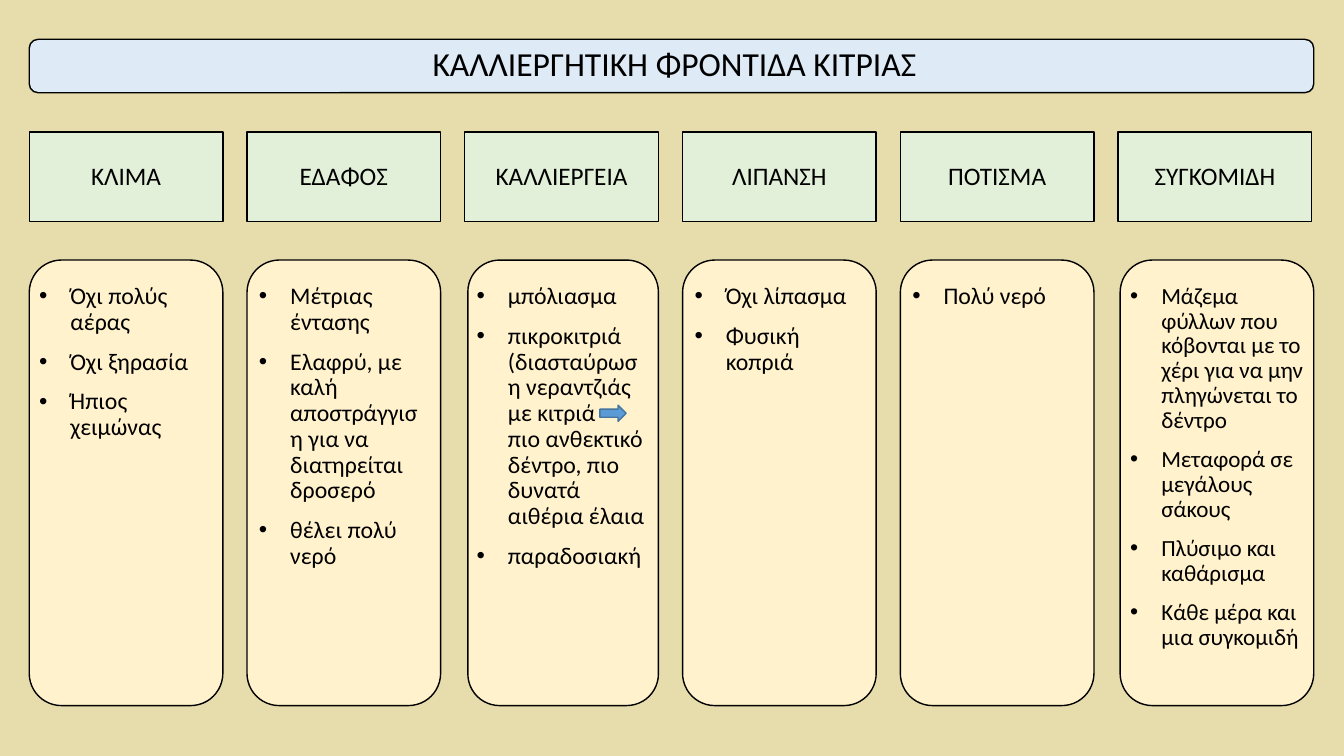
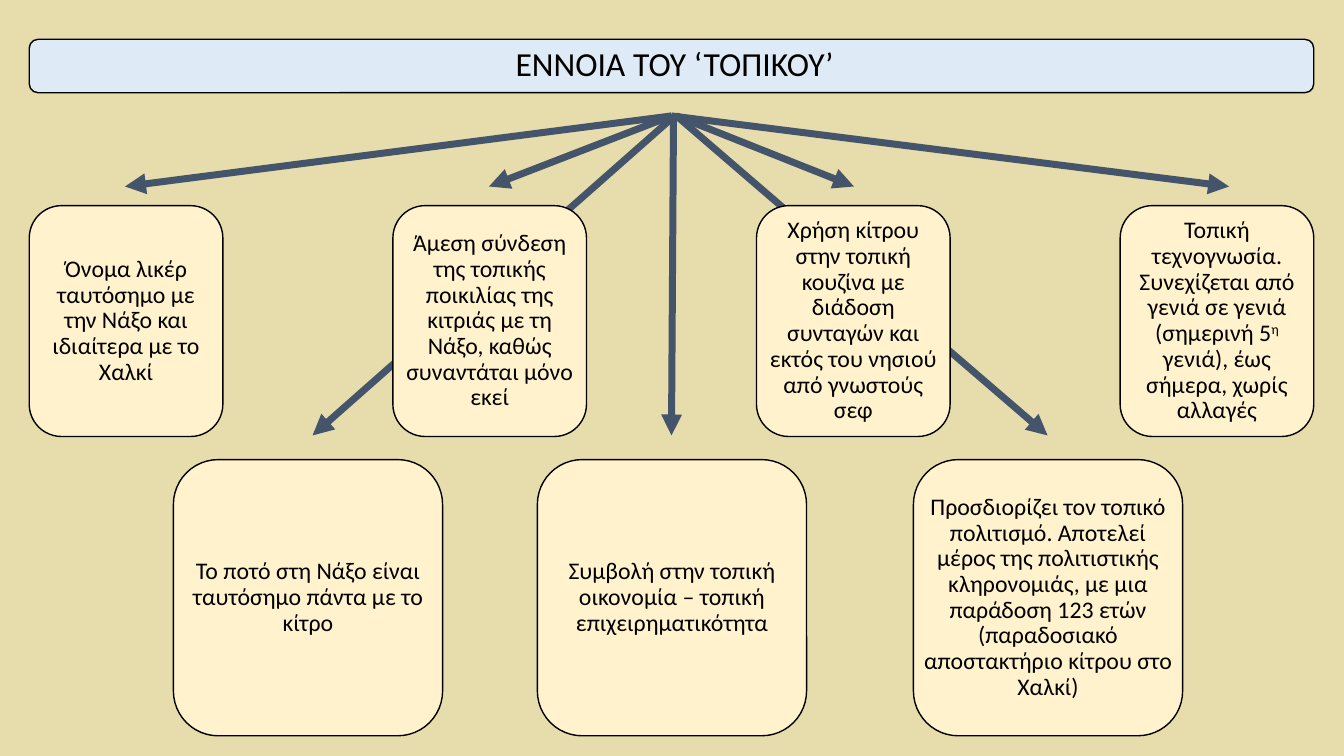
from lxml.etree import SubElement
from pptx import Presentation
from pptx.dml.color import RGBColor
from pptx.enum.shapes import MSO_CONNECTOR as CONN, MSO_SHAPE as SHAPE
from pptx.enum.text import MSO_ANCHOR as ANCHOR, PP_ALIGN as ALIGN
from pptx.oxml.ns import qn
from pptx.util import Inches, Pt

FONT = "Calibri"
SAND, BLUE, GREEN, CREAM = "E6DCAC", "DEEBF7", "E2F0D9", "FFF2CC"
INK, SLATE, ARROW, ARROW_EDGE = "000000", "44546A", "5B9BD5", "43739E"
WIDTH, HEIGHT = 13.33, 7.5
MARGIN, CARD_W = 0.29, 1.92
BANNER = (MARGIN, 0.39, 12.74, 0.53)
COL_PITCH = 2.16
HEAD_TOP, HEAD_H = 1.31, 0.89
CARD_TOP, CARD_H = 2.58, 4.42
LIST_TOP, LIST_H = 2.77, 3.97
UPPER_TOP, UPPER_H, UPPER_TIP = 2.04, 2.29, 1.85
UPPER_PITCH = (BANNER[2] - CARD_W) / 3
LOWER_TOP, LOWER_W, LOWER_H, LOWER_TIP = 4.56, 2.67, 2.74, 4.32
FAN_TOP = 1.15

HEADINGS = ["ΚΛΙΜΑ", "ΕΔΑΦΟΣ", "ΚΑΛΛΙΕΡΓΕΙΑ", "ΛΙΠΑΝΣΗ", "ΠΟΤΙΣΜΑ", "ΣΥΓΚΟΜΙΔΗ"]
# Each card: shift and trim of the card, shift and width of its list, size, items
CARDS = [
    (0, 0, 0, 1.92, 17, ["Όχι πολύς αέρας", "Όχι ξηρασία", "Ήπιος χειμώνας"]),
    (0, 0, 0.02, 1.88, 17, [
        "Μέτριας έντασης",
        "Ελαφρύ, με καλή αποστράγγιση για να διατηρείται δροσερό",
        "θέλει πολύ νερό"]),
    (0.03, 0.03, 0.02, 1.88, 17, [
        "μπόλιασμα",
        "πικροκιτριά (διασταύρωση νεραντζιάς με κιτριά\v"
        "πιο ανθεκτικό δέντρο, πιο δυνατά αιθέρια έλαια",
        "παραδοσιακή"]),
    (0, 0, 0.02, 1.92, 17, ["Όχι λίπασμα", "Φυσική κοπριά"]),
    (0, 0, 0.02, 1.88, 17, ["Πολύ νερό"]),
    (0.02, 0, 0.02, 1.92, 16.5, [
        "Μάζεμα φύλλων που κόβονται με το χέρι για να μην πληγώνεται το δέντρο",
        "Μεταφορά σε μεγάλους σάκους",
        "Πλύσιμο και καθάρισμα",
        "Κάθε μέρα και μια συγκομιδή"]),
]
UPPER = [
    (6.66, 1.24, ["Όνομα λικέρ ταυτόσημο με την Νάξο και ιδιαίτερα με το Χαλκί"]),
    (6.66, 4.85, ["Άμεση σύνδεση της τοπικής ποικιλίας της κιτριάς με τη Νάξο, "
                  "καθώς συναντάται μόνο εκεί"]),
    (6.71, 8.47, ["Χρήση κίτρου στην τοπική κουζίνα με διάδοση συνταγών και "
                  "εκτός του νησιού από γνωστούς σεφ"]),
    (6.66, 12.19, ["Τοπική τεχνογνωσία. Συνεχίζεται από γενιά σε γενιά (σημερινή 5",
                   "η", " γενιά), έως σήμερα, χωρίς αλλαγές"]),
]
LOWER = [
    (1.72, 6.69, 3.1, "Το ποτό στη Νάξο είναι ταυτόσημο πάντα με το κίτρο"),
    (5.33, 6.68, 6.66, "Συμβολή στην τοπική οικονομία – τοπική επιχειρηματικότητα"),
    (9.06, 6.71, 10.39, "Προσδιορίζει τον τοπικό πολιτισμό. Αποτελεί μέρος της "
                        "πολιτιστικής κληρονομιάς, με μια παράδοση 123 ετών "
                        "(παραδοσιακό αποστακτήριο κίτρου στο Χαλκί)"),
]


def rgb(value):
    """Turn a hex string into a colour."""
    return RGBColor.from_string(value)


def add_box(s, kind, at, fill, line=INK):
    """Draw a filled, outlined preset shape without a shadow."""
    sp = s.shapes.add_shape(kind, *map(Inches, at))
    sp.shadow.inherit = False
    sp.fill.solid()
    sp.fill.fore_color.rgb = rgb(fill)
    sp.line.color.rgb = rgb(line)
    sp.line.width = Pt(1)
    return sp


def style(p, size, align):
    """Give a paragraph and its runs the shared look."""
    p.alignment = align
    p.line_spacing = 0.9
    for r in p.runs:
        r.font.name = FONT
        r.font.size = Pt(size)
        r.font.color.rgb = rgb(INK)


def label(sp, parts, size):
    """Centre text in a shape, raising every second part."""
    tf = sp.text_frame
    tf.word_wrap = True
    tf.vertical_anchor = ANCHOR.MIDDLE
    p = tf.paragraphs[0]
    for i, part in enumerate(parts):
        r = p.add_run()
        r.text = part
        if i % 2:
            r.font._element.set("baseline", "30000")
    style(p, size, ALIGN.CENTER)


def bullet(p):
    """Add a hanging round bullet to a paragraph."""
    pPr = p._p.get_or_add_pPr()
    pPr.set("marL", str(Inches(0.31)))
    pPr.set("indent", str(-Inches(0.31)))
    SubElement(pPr, qn("a:buFont")).set("typeface", "Arial")
    SubElement(pPr, qn("a:buChar")).set("char", "•")


def add_list(s, at, items, size):
    """Write a bulleted list."""
    tf = s.shapes.add_textbox(*map(Inches, at)).text_frame
    tf.word_wrap = True
    for i, item in enumerate(items):
        p = tf.add_paragraph() if i else tf.paragraphs[0]
        p.text = item
        bullet(p)
        p.space_before = Pt(10 if i else 0)
        style(p, size, ALIGN.LEFT)


def add_card(s, at, parts):
    """Draw a cream card with centred text over its full width."""
    add_box(s, SHAPE.ROUNDED_RECTANGLE, at, CREAM)
    label(s.shapes.add_textbox(*map(Inches, at)), parts, 17)


def add_arrow(s, start, tip, bottom):
    """Draw a thick arrow from below the banner down to a card."""
    cn = s.shapes.add_connector(
        CONN.STRAIGHT, *map(Inches, (start, FAN_TOP, tip, bottom)))
    cn.line.color.rgb = rgb(SLATE)
    cn.line.width = Pt(5)
    SubElement(cn.line._get_or_add_ln(), qn("a:tailEnd")).set("type", "triangle")
    SubElement(cn._element.spPr, qn("a:effectLst"))


def new_slide(prs, title):
    """Add a sand-coloured slide with a title banner."""
    s = prs.slides.add_slide(prs.slide_layouts[6])
    s.background.fill.solid()
    s.background.fill.fore_color.rgb = rgb(SAND)
    sp = add_box(s, SHAPE.ROUNDED_RECTANGLE, BANNER, BLUE)
    sp.text_frame.margin_left = Inches(0.16)
    label(sp, [title], 24)
    return s


def care_slide(prs):
    """Build the six columns of cultivation care."""
    s = new_slide(prs, "ΚΑΛΛΙΕΡΓΗΤΙΚΗ ΦΡΟΝΤΙΔΑ ΚΙΤΡΙΑΣ")
    for i, (heading, card) in enumerate(zip(HEADINGS, CARDS)):
        shift, trim, list_shift, list_w, size, items = card
        left = MARGIN + i * COL_PITCH
        head = add_box(s, SHAPE.RECTANGLE, (left, HEAD_TOP, CARD_W, HEAD_H), GREEN)
        label(head, [heading], 18)
        add_box(s, SHAPE.ROUNDED_RECTANGLE,
                (left + shift, CARD_TOP, CARD_W - trim, CARD_H), CREAM)
        add_list(s, (left + list_shift, LIST_TOP, list_w, LIST_H), items, size)
    add_box(s, SHAPE.RIGHT_ARROW, (5.95, 4.02, 0.26, 0.16), ARROW, ARROW_EDGE)


def local_slide(prs):
    """Build the fan of arrows to seven meanings of local."""
    s = new_slide(prs, "ΕΝΝΟΙΑ ΤΟΥ ‘ΤΟΠΙΚΟΥ’")
    for left, start, tip, text in LOWER:
        add_arrow(s, start, tip, LOWER_TIP)
        add_card(s, (left, LOWER_TOP, LOWER_W, LOWER_H), [text])
    for i, (start, tip, parts) in enumerate(UPPER):
        add_arrow(s, start, tip, UPPER_TIP)
        add_card(s, (MARGIN + i * UPPER_PITCH, UPPER_TOP, CARD_W, UPPER_H), parts)


def main():
    """Build and save the presentation."""
    prs = Presentation()
    prs.slide_width, prs.slide_height = Inches(WIDTH), Inches(HEIGHT)
    care_slide(prs)
    local_slide(prs)
    prs.save("out.pptx")


if __name__ == "__main__":
    main()
